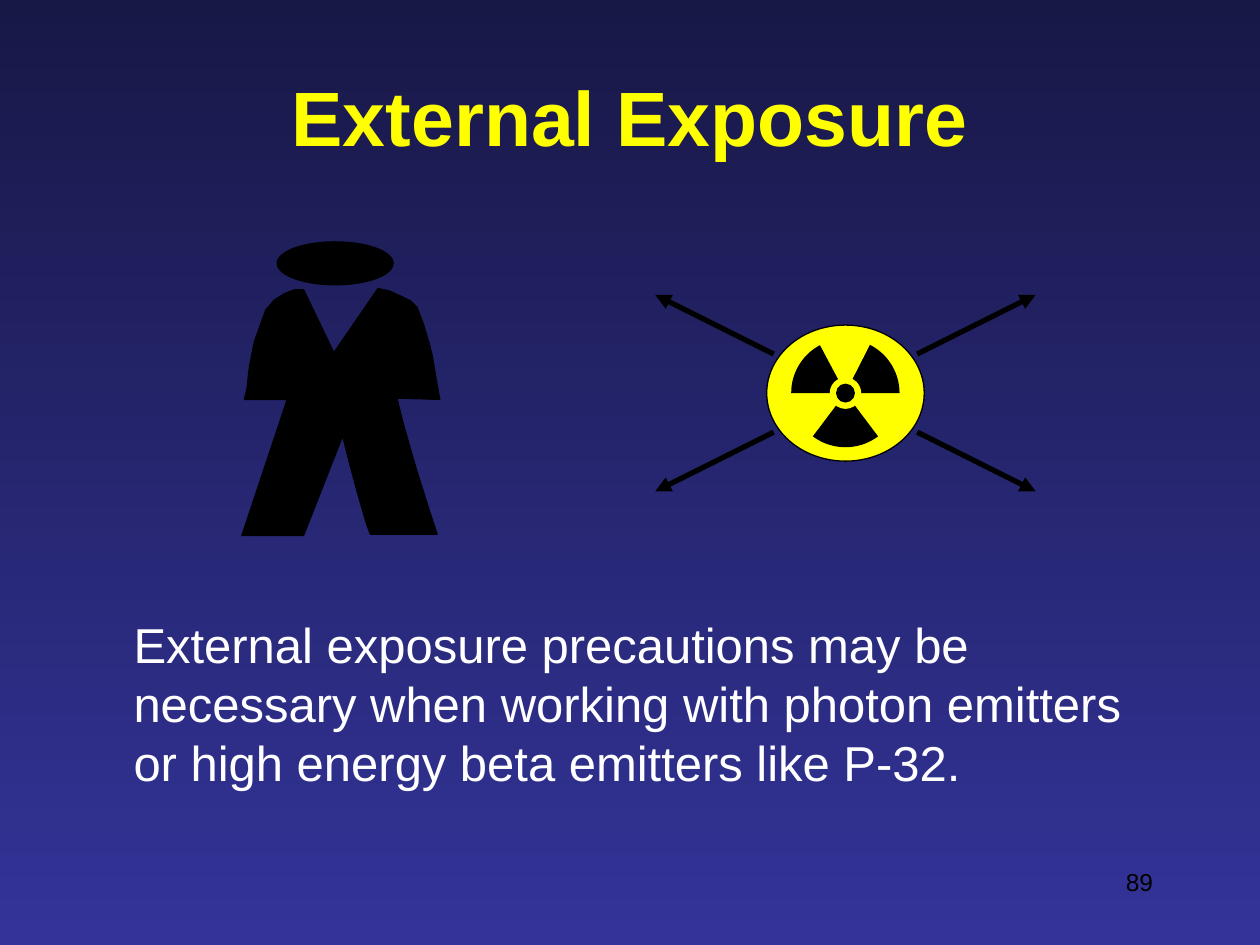
from itertools import product
from math import cos, radians, sin

from lxml.etree import SubElement
from pptx import Presentation
from pptx.dml.color import RGBColor
from pptx.enum.shapes import MSO_CONNECTOR, MSO_SHAPE
from pptx.enum.text import MSO_ANCHOR, MSO_AUTO_SIZE, PP_ALIGN
from pptx.oxml.ns import qn
from pptx.util import Inches, Pt

BLACK, YELLOW, WHITE = "000000", "FFFF00", "FFFFFF"
COAT_AND_LEGS = [
    (1.57, 1.25), (1.54, 1.08), (1.51, 0.9), (1.49, 0.82), (1.44, 0.65),
    (1.39, 0.52), (1.34, 0.47), (1.26, 0.43), (1.17, 0.39), (1.08, 0.37),
    (0.73, 0.88), (0.49, 0.38), (0.42, 0.38), (0.34, 0.41), (0.26, 0.46),
    (0.19, 0.54), (0.15, 0.65), (0.1, 0.79), (0.06, 0.99), (0.04, 1.17),
    (0.02, 1.25), (0.36, 1.25), (0, 2.33), (0.49, 2.33), (0.8, 1.54),
    (0.85, 1.74), (0.92, 2), (0.99, 2.24), (1.02, 2.32), (1.55, 2.32),
    (1.49, 2.14), (1.38, 1.79), (1.28, 1.44), (1.23, 1.24),
]


def color(hex_value):
    """Turn a hex string into a colour."""
    return RGBColor.from_string(hex_value)


def paint(shape, fill, line=None):
    """Give a shape a solid fill and an optional thin outline."""
    shape.shadow.inherit = False
    shape.fill.solid()
    shape.fill.fore_color.rgb = color(fill)
    if line:
        shape.line.color.rgb = color(line)
        shape.line.width = Pt(0.75)
    else:
        shape.line.fill.background()


def add_ellipse(slide, left, top, width, height, fill, line=None):
    """Add an ellipse in the given box."""
    box = [Inches(v) for v in (left, top, width, height)]
    paint(slide.shapes.add_shape(MSO_SHAPE.OVAL, *box), fill, line)


def add_outline(slide, points, fill, line=None):
    """Add a closed freeform through points in inches."""
    start, *rest = [(Inches(x), Inches(y)) for x, y in points]
    builder = slide.shapes.build_freeform(*start)
    builder.add_line_segments(rest, close=True)
    paint(builder.convert_to_shape(), fill, line)


def set_text(shape, box, text, size, hex_value, align, bold=False):
    """Place a text shape and format its only paragraph."""
    shape.left, shape.top, shape.width, shape.height = map(Inches, box)
    frame = shape.text_frame
    frame.word_wrap = True
    frame.auto_size = MSO_AUTO_SIZE.NONE
    frame.text = text
    paragraph = frame.paragraphs[0]
    paragraph.alignment = align
    paragraph.space_before = Pt(0)
    font = paragraph.runs[0].font
    font.name, font.size, font.bold = "Arial", Pt(size), bold
    font.color.rgb = color(hex_value)


def set_background(slide):
    """Fill the background with a vertical blue gradient."""
    fill = slide.background.fill
    fill.gradient()
    fill.gradient_angle = 270
    for stop, position, shade in zip(fill.gradient_stops, (0, 1), ("181847", "333399")):
        stop.position = position
        stop.color.rgb = color(shade)


def add_title(slide, box):
    """Fill the title placeholder."""
    title = slide.shapes.title
    set_text(title, box, "External Exposure", 44, YELLOW, PP_ALIGN.CENTER, True)
    title.text_frame.vertical_anchor = MSO_ANCHOR.MIDDLE


def add_precautions(slide, box):
    """Fill the body placeholder with an unbulleted, indented paragraph."""
    body = slide.placeholders[1]
    text = ("External exposure precautions may be necessary when working with "
            "photon emitters or high energy beta emitters like P-32.")
    set_text(body, box, text, 28, WHITE, PP_ALIGN.LEFT)
    properties = body.text_frame.paragraphs[0]._p.get_or_add_pPr()
    properties.set("marL", str(Inches(0.38)))
    properties.set("indent", "0")
    SubElement(properties, qn("a:buNone"))


def add_person(slide, left, top):
    """Draw the person from the top left corner of the figure."""
    body = [(left + x, top + y) for x, y in COAT_AND_LEGS]
    add_outline(slide, body, BLACK, BLACK)
    add_ellipse(slide, left + 0.28, top, 0.92, 0.34, BLACK, BLACK)


def add_ray(slide, start, end):
    """Draw an arrow between two points."""
    ray = slide.shapes.add_connector(
        MSO_CONNECTOR.STRAIGHT, *map(Inches, (*start, *end)))
    ray.line.color.rgb = color(BLACK)
    ray.line.width = Pt(3)
    SubElement(ray.line._get_or_add_ln(), qn("a:tailEnd"), type="triangle")
    SubElement(ray._element.spPr, qn("a:effectLst"))


def add_source(slide, x, y):
    """Draw the radiation source and its rays around a centre point."""
    def add_disc(width, height, fill, line=None):
        """Add an ellipse on the centre."""
        add_ellipse(slide, x - width / 2, y - height / 2, width, height, fill, line)

    add_disc(1.25, 1.08, YELLOW, BLACK)
    for first, last in ((180, 242), (53, 127), (297, 360)):
        steps = 24
        angles = [radians(first + (last - first) * i / steps) for i in range(steps + 1)]
        arc = [(x + 0.43 * cos(a), y + 0.43 * sin(a)) for a in angles]
        add_outline(slide, [(x, y), *arc], BLACK)
    add_disc(0.25, 0.25, YELLOW)
    add_disc(0.15, 0.15, BLACK)
    for across, down in product((-1, 1), repeat=2):
        add_ray(slide, (x + 0.57 * across, y + 0.31 * down),
                (x + 1.51 * across, y + 0.78 * down))


def add_page_number(slide, box):
    """Add the page number."""
    number = slide.shapes.add_textbox(*map(Inches, box))
    set_text(number, box, "89", 14, BLACK, PP_ALIGN.RIGHT)


def main():
    """Build and save the slide."""
    deck = Presentation()
    deck.slide_width, deck.slide_height = Inches(10), Inches(7.5)
    slide = deck.slides.add_slide(deck.slide_layouts[1])
    set_background(slide)
    add_title(slide, (0.75, 0.42, 8.5, 1))
    add_precautions(slide, (0.58, 4.83, 8.75, 2.33))
    add_person(slide, 1.92, 1.92)
    add_source(slide, 6.71, 3.12)
    add_page_number(slide, (7.17, 6.83, 2.08, 0.5))
    deck.save("out.pptx")


if __name__ == "__main__":
    main()
